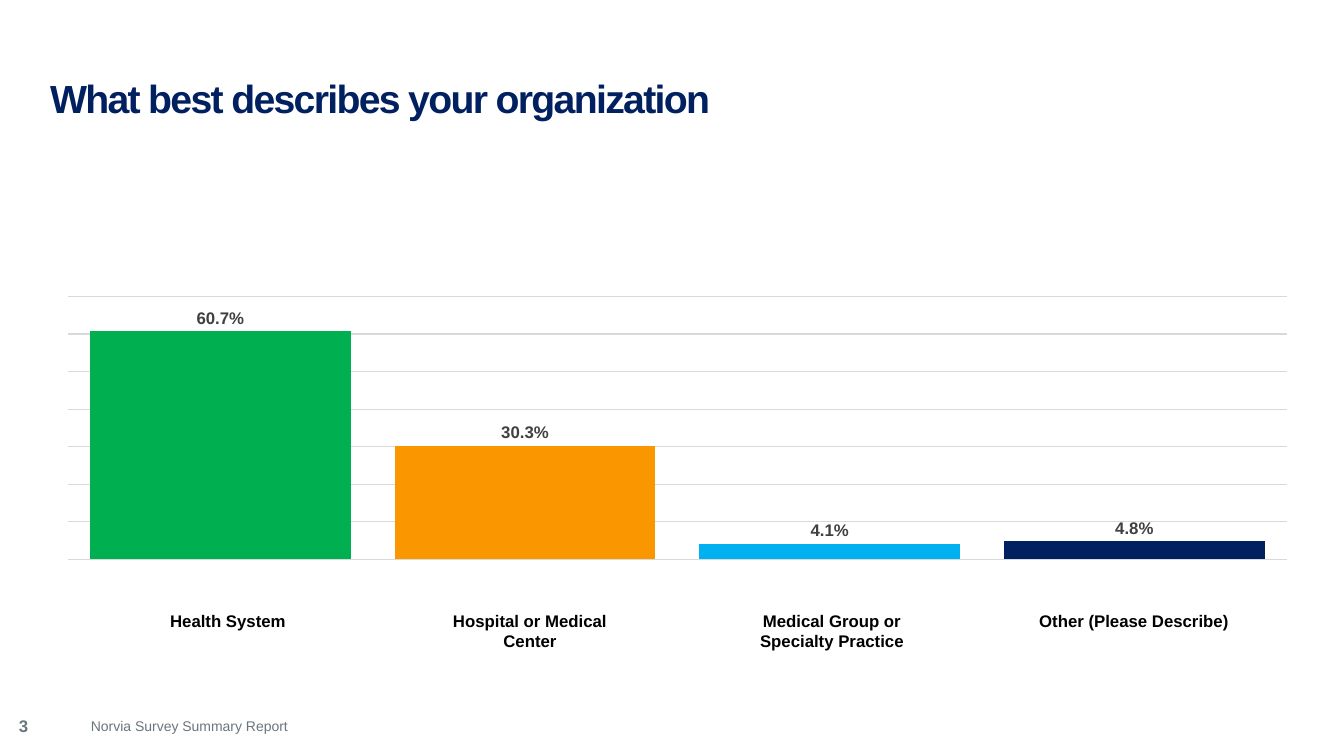
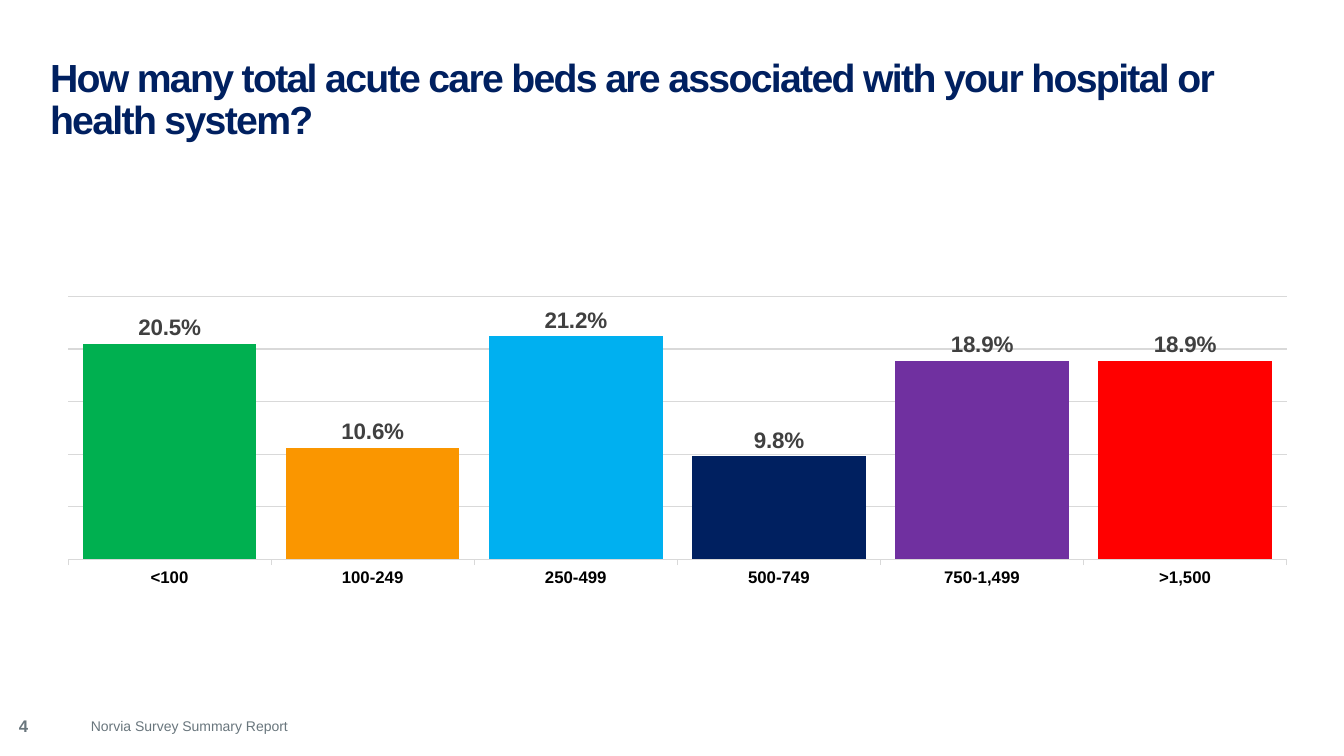
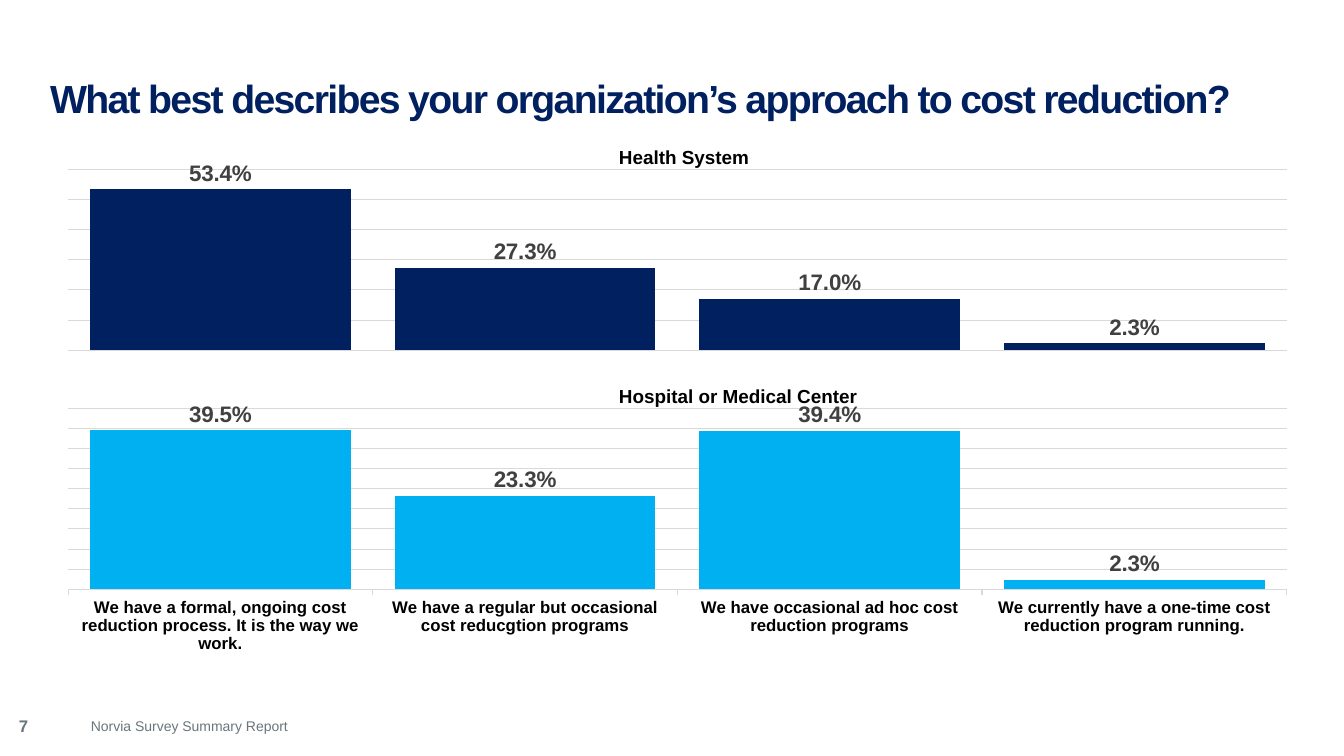
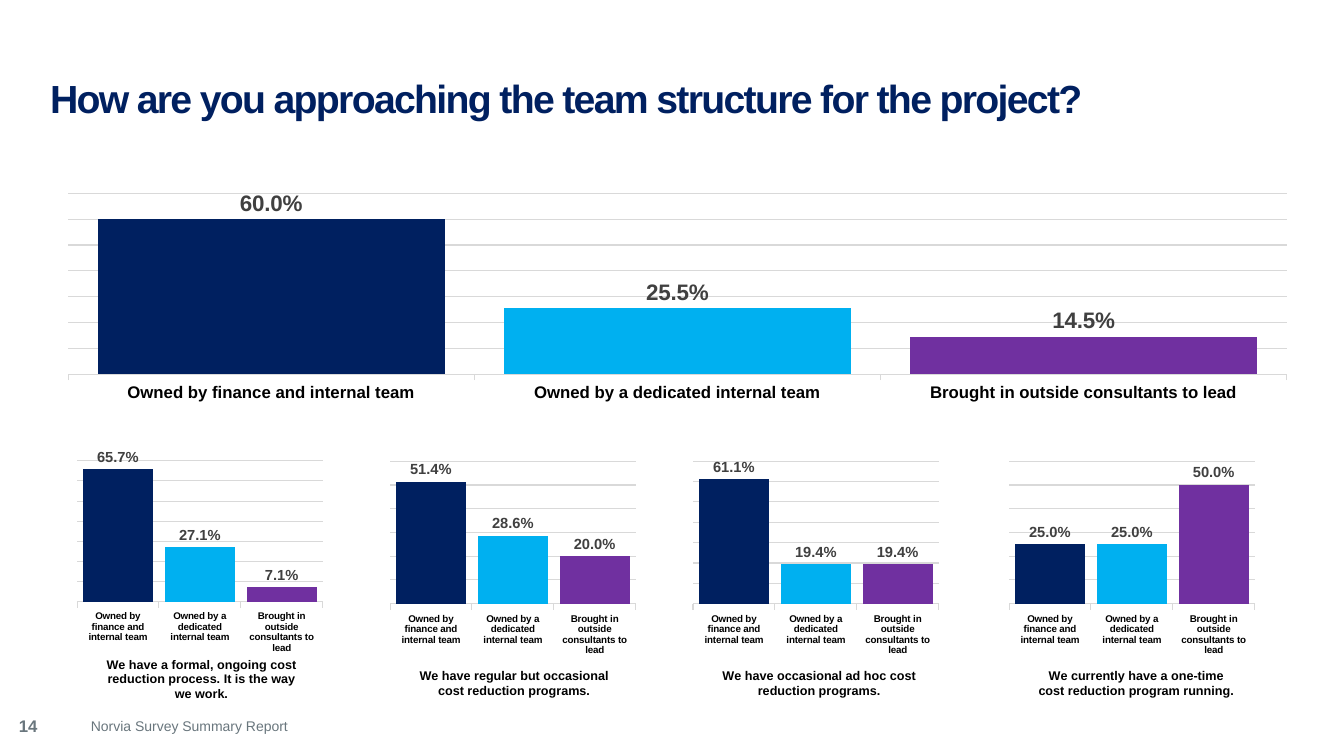
from lxml import etree
from pptx import Presentation
from pptx.chart.data import CategoryChartData
from pptx.dml.color import RGBColor
from pptx.enum.chart import XL_CHART_TYPE, XL_LABEL_POSITION, XL_TICK_LABEL_POSITION, XL_TICK_MARK
from pptx.enum.text import MSO_ANCHOR, MSO_AUTO_SIZE, PP_ALIGN
from pptx.oxml import parse_xml
from pptx.oxml.ns import nsdecls, qn
from pptx.util import Pt

COLUMNS = XL_CHART_TYPE.COLUMN_CLUSTERED
ABOVE_BAR = XL_LABEL_POSITION.OUTSIDE_END
NO_LABELS = XL_TICK_LABEL_POSITION.NONE
TICK_OUT, TICK_NONE = XL_TICK_MARK.OUTSIDE, XL_TICK_MARK.NONE
LEFT, CENTER = PP_ALIGN.LEFT, PP_ALIGN.CENTER
MIDDLE = MSO_ANCHOR.MIDDLE
NO_FIT = MSO_AUTO_SIZE.NONE

PX = 914400 / 100.8
FONT = "Arial"
FOOTER = "Norvia Survey Summary Report"
COLORS = {
    "navy": "002060", "green": "00B050", "orange": "FA9600", "sky": "00B0F0",
    "purple": "7030A0", "red": "FF0000", "footer": "69767D", "grid": "D9D9D9",
    "value": "404040", "black": "000000",
}
ANSWER_COLORS = ["green", "orange", "sky", "navy", "purple", "red"]
TEAM_COLORS = ["navy", "sky", "purple"]

TITLE_BOX = (50, 50, 1240, 101)
NUMBER_BOX = (9, 711, 45, 30)
FOOTER_BOX = (81, 713, 983, 27)
SINGLE_BOX = (53, 235, 1250, 424)
WIDE_LEFT, WIDE_WIDTH, WIDE_HEIGHT = 53, 1250, 292
SMALL_TOP, SMALL_WIDTH, SMALL_HEIGHT = 420, 252, 285
LABEL_LEFT, LABEL_TOP, LABEL_STEP, LABEL_WIDTH, LABEL_HEIGHT = 123, 611, 302, 210, 29

NUMBERED = ["1", "2", "3", "4"]
ORGANIZATIONS = ["Health System", "Hospital or Medical Center",
                 "Medical Group or Specialty Practice", "Other (Please Describe)"]
BEDS = ["<100", "100-249", "250-499", "500-749", "750-1,499", ">1,500"]
APPROACHES = [
    "We have a formal, ongoing cost reduction process. It is the way we work.",
    "We have a regular but occasional cost reducgtion programs",
    "We have occasional ad hoc cost reduction programs",
    "We currently have a one-time cost reduction program running.",
]
TEAMS = ["Owned by finance and internal team", "Owned by a dedicated internal team",
         "Brought in outside consultants to lead"]
TEAMS_BY_APPROACH = [
    (74, "We have a formal, ongoing cost reduction process. It is the way we work.",
     [0.657, 0.271, 0.071], 0.7, 0.83),
    (387, "We have regular but occasional cost reduction programs.",
     [0.514, 0.286, 0.2], 0.6, 0.86),
    (690, "We have occasional ad hoc cost reduction programs.",
     [0.611, 0.194, 0.194], 0.7, 0.86),
    (1006, "We currently have a one-time cost reduction program running.",
     [0.25, 0.25, 0.5], 0.6, 0.86),
]

CHART_DEFAULTS = {"top": 0.1, "unit": 0.1, "axis": "shown", "category_size": 12,
                  "value_size": 16, "plot_height": 0.62, "caption": None}


def wide_box(top):
    return WIDE_LEFT, top, WIDE_WIDTH, WIDE_HEIGHT


def caption(text, size, x, y):
    return {"text": text, "size": size, "x": x, "y": y}


SLIDES = [
    {"number": "3", "title": "What best describes your organization",
     "labels": ORGANIZATIONS,
     "charts": [{"box": SINGLE_BOX, "categories": NUMBERED,
                 "values": [0.607, 0.303, 0.041, 0.048], "colors": ANSWER_COLORS,
                 "top": 0.7, "axis": "hidden", "value_size": 12}]},
    {"number": "4",
     "title": "How many total acute care beds are associated with your hospital or health system?",
     "charts": [{"box": SINGLE_BOX, "categories": BEDS,
                 "values": [0.205, 0.106, 0.212, 0.098, 0.189, 0.189],
                 "colors": ANSWER_COLORS, "top": 0.25, "unit": 0.05}]},
    {"number": "7", "title": "What best describes your organization’s approach to cost reduction?",
     "charts": [
         {"box": wide_box(366), "categories": APPROACHES,
          "values": [0.395, 0.233, 0.394, 0.023], "colors": ["sky"] * 4,
          "top": 0.45, "unit": 0.05,
          "caption": caption("Hospital or Medical Center", 13.5, 0.45, 0.05)},
         {"box": wide_box(127), "categories": NUMBERED,
          "values": [0.534, 0.273, 0.17, 0.023], "colors": ["navy"] * 4,
          "top": 0.6, "axis": "bare",
          "caption": caption("Health System", 13.5, 0.45, 0.05)},
     ]},
    {"number": "14", "title": "How are you approaching the team structure for the project?",
     "charts": [{"box": wide_box(151), "categories": TEAMS,
                 "values": [0.6, 0.255, 0.145], "colors": TEAM_COLORS, "top": 0.7}] + [
         {"box": (left, SMALL_TOP, SMALL_WIDTH, SMALL_HEIGHT), "categories": TEAMS,
          "values": values, "colors": TEAM_COLORS, "top": top,
          "category_size": 7, "value_size": 10.5, "plot_height": 0.5,
          "caption": caption(approach, 9, 0.12, caption_top)}
         for left, approach, values, top, caption_top in TEAMS_BY_APPROACH]},
]


def emu(box):
    return [round(length * PX) for length in box]


def rgb(name):
    return RGBColor.from_string(COLORS[name])


def set_all(target, values):
    for name, value in values.items():
        setattr(target, name, value)


def style_font(font, size, color, bold=True):
    set_all(font, {"name": FONT, "size": Pt(size), "bold": bold})
    font.color.rgb = rgb(color)


def style_line(line, color):
    line.color.rgb = rgb(color)
    line.width = Pt(0.75)


def add_text(slide, box, text, size, color, bold=True, align=LEFT, inset=True):
    frame = slide.shapes.add_textbox(*emu(box)).text_frame
    frame.word_wrap = True
    if not inset:
        set_all(frame, dict.fromkeys(
            ["margin_left", "margin_top", "margin_right", "margin_bottom"], 0))
    frame.text = text
    frame.paragraphs[0].alignment = align
    style_font(frame.paragraphs[0].runs[0].font, size, color, bold)


def set_title(slide, text):
    title = slide.shapes.title
    set_all(title, dict(zip(["left", "top", "width", "height"], emu(TITLE_BOX))))
    frame = title.text_frame
    set_all(frame, {"margin_left": 0, "margin_top": 0, "margin_right": 0, "margin_bottom": 0,
                    "vertical_anchor": MIDDLE, "word_wrap": True, "auto_size": NO_FIT})
    frame.text = text
    paragraph = frame.paragraphs[0]
    set_all(paragraph, {"alignment": LEFT, "line_spacing": 0.9})
    run = paragraph.runs[0]
    style_font(run.font, 28, "navy")
    run.font._element.set("spc", "-120")


def set_layout(parent, index, values):
    for old in parent.findall(qn("c:layout")):
        parent.remove(old)
    layout = parse_xml(f"<c:layout {nsdecls('c')}/>")
    manual = etree.SubElement(layout, qn("c:manualLayout"))
    for tag, value in values.items():
        etree.SubElement(manual, qn("c:" + tag)).set("val", str(value))
    parent.insert(index, layout)


def add_caption(axis, text, size, x, y):
    frame = axis.axis_title.text_frame
    frame.text = text
    style_font(frame.paragraphs[0].runs[0].font, size, "black")
    set_layout(axis.axis_title._element, 1,
               {"xMode": "edge", "yMode": "edge", "x": x, "y": y})


def style_category_axis(axis, mode, size):
    axis.visible = mode != "hidden"
    shown = mode == "shown"
    set_all(axis, {"has_major_gridlines": False, "minor_tick_mark": TICK_NONE,
                   "major_tick_mark": TICK_OUT if shown else TICK_NONE})
    if shown:
        style_font(axis.tick_labels.font, size, "black")
        style_line(axis.format.line, "grid")
    else:
        axis.tick_label_position = NO_LABELS
        axis.format.line.fill.background()


def add_column_chart(slide, content):
    content = CHART_DEFAULTS | content
    data = CategoryChartData(number_format="0.0%")
    data.categories = content["categories"]
    data.add_series("Series 1", content["values"])
    chart = slide.shapes.add_chart(COLUMNS, *emu(content["box"]), data).chart
    set_all(chart, {"has_title": False, "has_legend": False})
    style_font(chart.font, 10, "black", False)
    chart_space = chart._chartSpace
    chart_space.find(qn("c:chart")).addnext(parse_xml(
        f"<c:spPr {nsdecls('c', 'a')}><a:noFill/><a:ln><a:noFill/></a:ln></c:spPr>"))
    set_layout(chart_space.find(".//" + qn("c:plotArea")), 0, {
        "layoutTarget": "inner", "xMode": "edge", "yMode": "edge",
        "x": 0.012, "y": 0.145, "w": 0.975, "h": content["plot_height"]})

    style_category_axis(chart.category_axis, content["axis"], content["category_size"])
    if content["caption"]:
        add_caption(chart.category_axis, **content["caption"])
    value_axis = chart.value_axis
    set_all(value_axis, {"visible": False, "has_major_gridlines": True, "minimum_scale": 0,
                         "maximum_scale": content["top"], "major_unit": content["unit"]})
    style_line(value_axis.major_gridlines.format.line, "grid")

    plot = chart.plots[0]
    set_all(plot, {"gap_width": 17, "overlap": -27, "vary_by_categories": False,
                   "has_data_labels": True})
    set_all(plot.data_labels, {"show_value": True, "position": ABOVE_BAR,
                               "number_format": "0.0%", "number_format_is_linked": False})
    style_font(plot.data_labels.font, content["value_size"], "value")
    for index, color in zip(range(len(content["values"])), content["colors"]):
        fill = plot.series[0].points[index].format.fill
        fill.solid()
        fill.fore_color.rgb = rgb(color)


def main():
    deck = Presentation()
    deck.slide_width, deck.slide_height = emu((1344, 756))
    for content in SLIDES:
        slide = deck.slides.add_slide(deck.slide_layouts[5])
        add_text(slide, NUMBER_BOX, content["number"], 12, "footer")
        add_text(slide, FOOTER_BOX, FOOTER, 10, "footer", bold=False)
        set_title(slide, content["title"])
        for chart in content["charts"]:
            add_column_chart(slide, chart)
        for index, label in enumerate(content.get("labels", [])):
            box = (LABEL_LEFT + index * LABEL_STEP, LABEL_TOP, LABEL_WIDTH, LABEL_HEIGHT)
            add_text(slide, box, label, 12, "black", align=CENTER, inset=False)
    deck.save("out.pptx")


if __name__ == "__main__":
    main()
